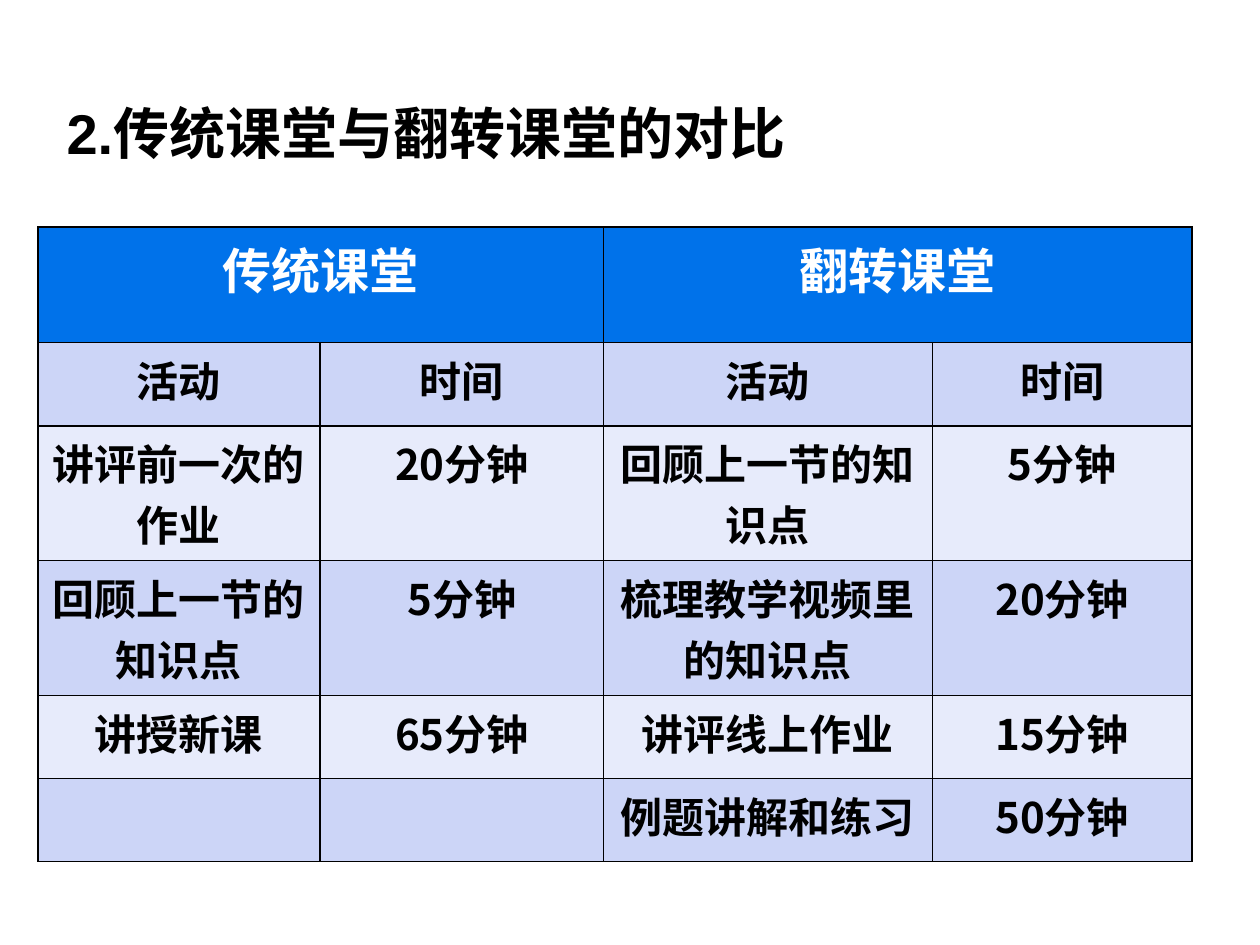
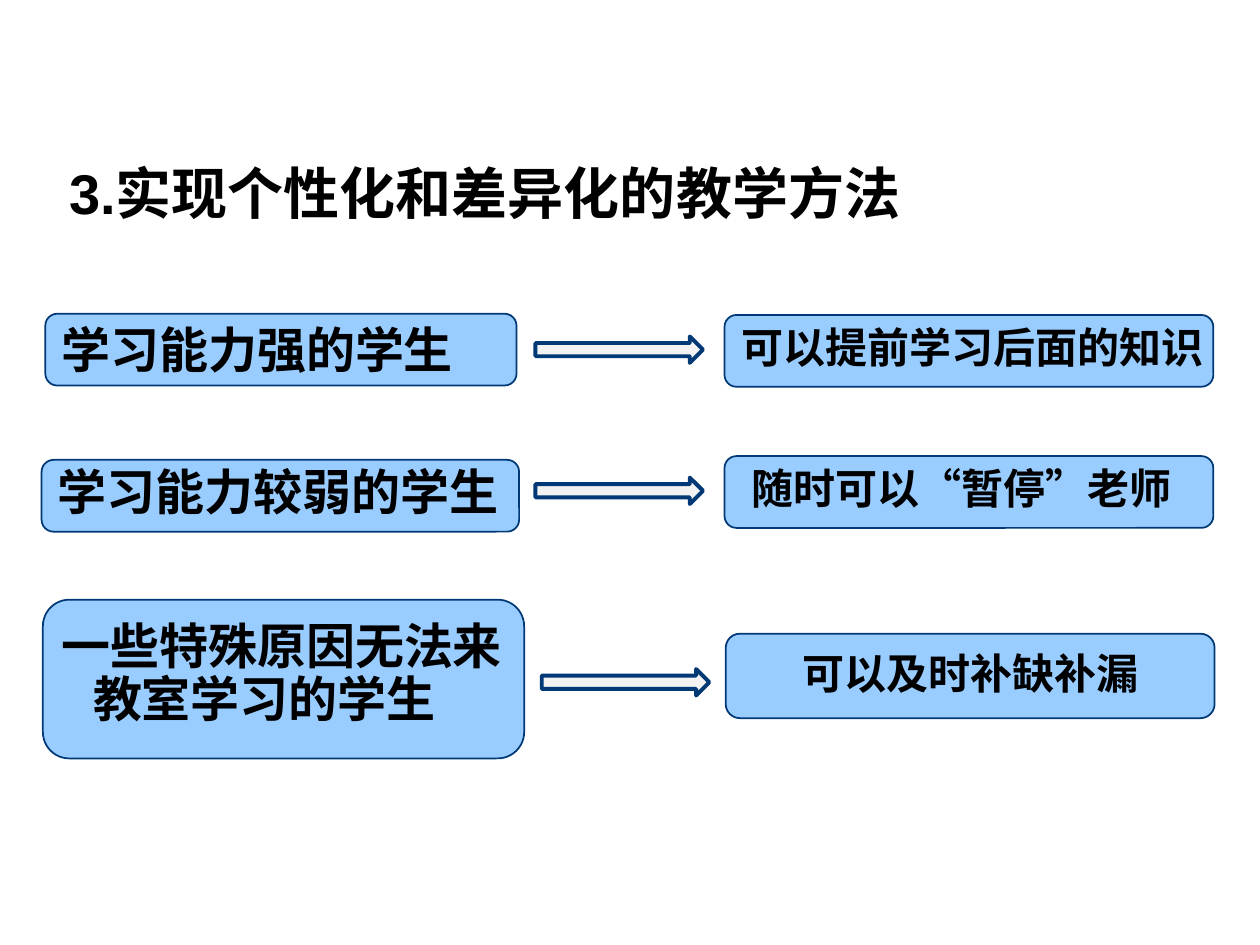
"""Build two slides on the flipped classroom: a timetable and teaching for each kind of student."""
from dataclasses import dataclass

from lxml.etree import SubElement
from pptx import Presentation
from pptx.dml.color import RGBColor
from pptx.enum.shapes import MSO_SHAPE
from pptx.enum.text import MSO_ANCHOR, PP_ALIGN
from pptx.oxml.ns import qn
from pptx.util import Inches, Pt


@dataclass(frozen=True)
class Theme:
    black: str = "000000"
    white: str = "FFFFFF"
    header: str = "0072EA"
    bands: tuple = ("CCD5F7", "E7EBFB")
    box: str = "99CCFF"
    arrow: str = "F2F2F2"
    line: str = "003975"
    title_font: str = "Arial"
    header_font: str = "Times New Roman"
    body_font: str = "Noto Sans CJK SC"
    title_size: int = 32
    large: int = 28
    small: int = 24


T = Theme()
TITLE = dict(size=T.title_size, name=T.title_font)
HEADER = dict(size=T.large, name=T.header_font, color=T.white)
LARGE = dict(size=T.large)
SMALL = dict(size=T.small)

COMPARE_TITLE = ("2.传统课堂与翻转课堂的对比", (0.43, 0.79, 8.8, 0.45))
CLASSROOMS = ["传统课堂", "翻转课堂"]
ACTIVITIES = [
    ["活动", "时间", "活动", "时间"],
    ["讲评前一次的作业", "20分钟", "回顾上一节的知识点", "5分钟"],
    ["回顾上一节的知识点", "5分钟", "梳理教学视频里的知识点", "20分钟"],
    ["讲授新课", "65分钟", "讲评线上作业", "15分钟"],
    ["", "", "例题讲解和练习", "50分钟"],
]
COLUMNS = [2.24, 2.25, 2.61, 2.06]
HEADER_ROW, ONE_LINE, TWO_LINES = 0.92, 0.66, 1.07
ROWS = [HEADER_ROW, ONE_LINE, TWO_LINES, TWO_LINES, ONE_LINE, ONE_LINE]

METHOD_TITLE = ("3.实现个性化和差异化的教学方法", (0.45, 1.27, 8.8, 0.56))
STUDENTS = [
    ("学习能力强的学生", (0.36, 2.49, 3.74, 0.57), (0.39, 2.54, 4.17, 0.56)),
    ("学习能力较弱的学生", (0.33, 3.65, 3.79, 0.57), (0.36, 3.67, 3.92, 0.56)),
    ("一些特殊原因无法来教室学习的学生", (0.34, 4.76, 3.82, 1.26), (0.39, 4.89, 3.92, 1.22)),
]
METHODS = [
    ("可以提前学习后面的知识", (5.75, 2.5, 3.88, 0.57), (5.79, 2.55, 4.33, 0.56)),
    ("随时可以“暂停”老师", (5.75, 3.62, 3.88, 0.57), (5.87, 3.67, 4.24, 0.56)),
    ("可以及时补缺补漏", (5.76, 5.03, 3.88, 0.67), None),
]
ARROWS = [(4.25, 2.67), (4.25, 3.79), (4.3, 5.31)]
ARROW_SIZE = (1.33, 0.21)


def inches(box):
    return [Inches(v) for v in box]


def write(tf, text, size, name=T.body_font, color=T.black, align=None, hang=0):
    p = tf.paragraphs[0]
    if align is not None:
        p.alignment = align
    if hang:
        p.line_spacing = 0.9
        pPr = p._p.get_or_add_pPr()
        for key, value in dict(marL=hang, indent=-hang).items():
            pPr.set(key, str(Inches(value)))
    r = p.add_run()
    r.text = text
    for key, value in dict(size=Pt(size), name=name, bold=True).items():
        setattr(r.font, key, value)
    r.font.color.rgb = RGBColor.from_string(color)
    SubElement(r._r.get_or_add_rPr(), qn("a:ea"), typeface=T.body_font)


def add_text(shapes, text, box, style):
    tf = shapes.add_textbox(*inches(box)).text_frame
    tf.word_wrap = True
    write(tf, text, hang=0.25, **style)


def add_shape(shapes, kind, box, fill, width):
    sp = shapes.add_shape(kind, *inches(box))
    sp.shadow.inherit = False
    sp.fill.solid()
    sp.fill.fore_color.rgb = RGBColor.from_string(fill)
    sp.line.color.rgb = RGBColor.from_string(T.line)
    sp.line.width = Pt(width)
    return sp


def add_label(s, text, box, text_box, style):
    shapes = s.shapes.add_group_shape().shapes
    sp = add_shape(shapes, MSO_SHAPE.ROUNDED_RECTANGLE, box, T.box, 1)
    if text_box:
        add_text(shapes, text, text_box, style)
    else:
        tf = sp.text_frame
        tf.word_wrap = False
        tf.vertical_anchor = MSO_ANCHOR.MIDDLE
        write(tf, text, align=PP_ALIGN.CENTER, hang=0.19, **style)


def fill_cell(cell, text, fill, style):
    tcPr = cell._tc.get_or_add_tcPr()
    for side in ("lnL", "lnR", "lnT", "lnB"):
        ln = SubElement(tcPr, qn(f"a:{side}"), w=str(Pt(1)))
        SubElement(SubElement(ln, qn("a:solidFill")), qn("a:srgbClr"), val=T.black)
    cell.fill.solid()
    cell.fill.fore_color.rgb = RGBColor.from_string(fill)
    if text:
        write(cell.text_frame, text, align=PP_ALIGN.CENTER, **style)


def add_slide(prs, title):
    s = prs.slides.add_slide(prs.slide_layouts[6])
    add_text(s.shapes, *title, TITLE)
    return s


def compare_slide(prs):
    s = add_slide(prs, COMPARE_TITLE)
    box = (0.3, 1.8, sum(COLUMNS), sum(ROWS))
    tbl = s.shapes.add_table(len(ROWS), len(COLUMNS), *inches(box)).table
    for col, width in zip(tbl.columns, COLUMNS):
        col.width = Inches(width)
    for row, height in zip(tbl.rows, ROWS):
        row.height = Inches(height)
    for i, name in enumerate(CLASSROOMS):
        left, right = tbl.cell(0, 2 * i), tbl.cell(0, 2 * i + 1)
        left.merge(right)
        fill_cell(left, name, T.header, HEADER)
        fill_cell(right, "", T.header, HEADER)
    for i, row in enumerate(ACTIVITIES):
        for j, text in enumerate(row):
            fill_cell(tbl.cell(i + 1, j), text, T.bands[i % 2], SMALL)


def method_slide(prs):
    s = add_slide(prs, METHOD_TITLE)
    for student, arrow, method in zip(STUDENTS, ARROWS, METHODS):
        add_label(s, *student, LARGE)
        add_shape(s.shapes, MSO_SHAPE.RIGHT_ARROW, arrow + ARROW_SIZE, T.arrow, 2.25)
        add_label(s, *method, SMALL)


def main():
    prs = Presentation()
    prs.slide_width, prs.slide_height = Inches(10), Inches(7.5)
    compare_slide(prs)
    method_slide(prs)
    prs.save("out.pptx")


if __name__ == "__main__":
    main()
